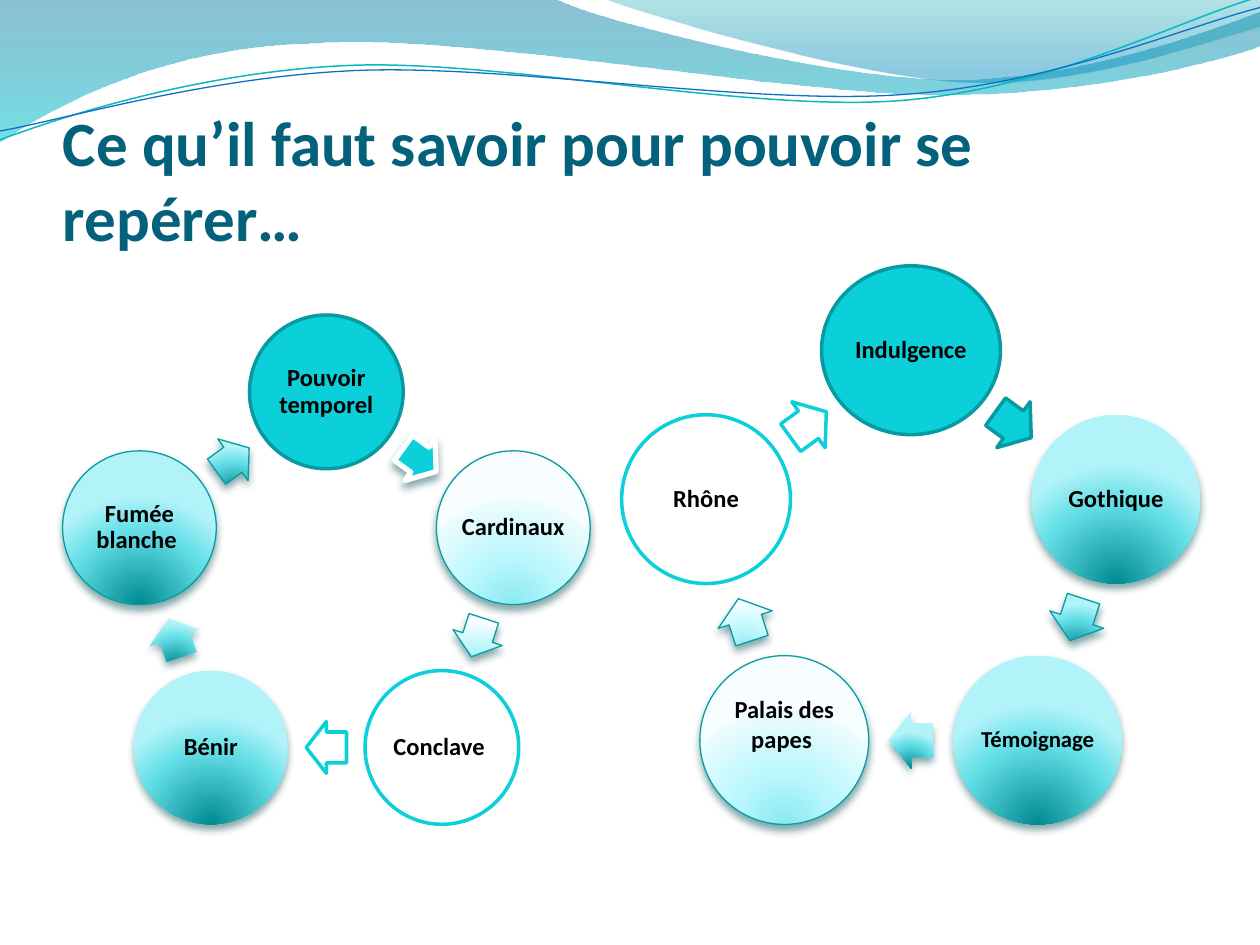
from itertools import islice
from math import cos, radians, sin

from lxml.etree import SubElement
from pptx import Presentation
from pptx.dml.color import RGBColor
from pptx.enum.shapes import MSO_SHAPE
from pptx.enum.text import MSO_ANCHOR, PP_ALIGN
from pptx.oxml import parse_xml
from pptx.oxml.ns import nsdecls, qn
from pptx.util import Inches, Pt

COLORS = {
    "title": "04617B", "text": "000000", "white": "FFFFFF",
    "cyan": "0BD0D9", "teal": "089AA1", "edge": "069CA3", "shadow": "024B4E",
    "wave_teal": "0AB8BF", "wave_blue": "0F6FC6",
}

# Radial gradients: (position, colour)
GRADIENTS = {
    "light": [(0, "8BE9F1"), (43, "B9F7FD"), (93, "EAFCFE"), (100, "F8FEFF")],
    "dark": [(0, "008A91"), (68, "64DFE7"), (100, "B1F3F9")],
}
RADIAL = ('<a:path path="circle"><a:fillToRect l="50000" t="130000" '
          'r="50000" b="-30000"/></a:path>')
DOWNWARD = '<a:lin ang="5400000" scaled="0"/>'

# Styles: fill, line colour, line width, shadow
STYLES = {
    "solid": ("cyan", "teal", 2, False),
    "solid_white": ("cyan", "white", 3, True),
    "outline": ("white", "cyan", 2, False),
    "light": ("light", "edge", 0.75, True),
    "dark": ("dark", None, 0, True),
    "dark_edge": ("dark", "edge", 0.75, True),
}

# Waves: start point, then lines (one point) and Bézier curves (three points)
BANDS = [
    ([(0, 0), [(4.4, -0.01)],
      [(4.76, 0.17), (6.64, 0.63), (7.58, 0.63)],
      [(8.53, 0.63), (9.58, 0.26), (10, 0.09)],
      [(10.01, 0.36)],
      [(9.83, 0.44), (8.7, 0.76), (7.46, 0.75)],
      [(6.22, 0.75), (3.82, 0.28), (2.57, 0.34)],
      [(1.29, 0.36), (0.46, 0.83), (-0.01, 1.13)],
      [(0, 0)]],
     [(0, "0074A1", 45), (100, "00C6CF", 55)]),
    ([(4.79, -0.01),
      [(5.09, 0.11), (6.82, 0.62), (7.69, 0.65)],
      [(8.56, 0.69), (9.61, 0.32), (10, 0.21)],
      [(10, 0)],
      [(4.79, -0.01)]],
     [(0, "00A1A9", 30), (80, "008BBF", 45)]),
]
CURVES = [
    ([(0, 1.11),
      [(0.48, 0.93), (1.58, 0.57), (2.77, 0.52)],
      [(3.95, 0.47), (5.93, 0.89), (7.13, 0.8)],
      [(8.33, 0.71), (9.38, 0.15), (9.98, -0.02)]], "wave_teal", 0.85),
    ([(0, 1.04),
      [(0.47, 0.96), (1.64, 0.61), (2.83, 0.56)],
      [(4.03, 0.51), (5.97, 0.84), (7.17, 0.75)],
      [(8.36, 0.67), (9.41, 0.21), (10, 0.06)]], "wave_blue", 0.75),
]

# Cycles: text, node style, style of the arrow to the next node, extra format
POPE_CYCLE = [
    ("Pouvoir temporel", "solid", "solid_white", {}),
    ("Cardinaux ", "light", "light", {}),
    ("Conclave ", "outline", "outline", {}),
    ("Bénir", "dark", "dark", {}),
    ("Fumée blanche ", "dark_edge", "dark_edge", {}),
]
AVIGNON_CYCLE = [
    ("Indulgence", "solid", "solid", {"width": 1.42}),
    ("Gothique", "dark", "dark_edge", {}),
    ("Témoignage", "dark", "dark", {"size": 13}),
    ("Palais des papes ", "light", "light", {"bottom": 0.28, "spacing": 1}),
    ("Rhône", "outline", "outline", {}),
]


def rgb(name):
    return RGBColor.from_string(COLORS[name])


def add_text(s, text, x, y, width, height, size=14, color="text",
             align=PP_ALIGN.CENTER, anchor=MSO_ANCHOR.MIDDLE,
             margins=(0.02, 0.02, 0.02, 0.02), spacing=0.9):
    sp = s.shapes.add_textbox(*map(Inches, (x, y, width, height)))
    tf = sp.text_frame
    tf.word_wrap = True
    tf.vertical_anchor = anchor
    (tf.margin_left, tf.margin_top,
     tf.margin_right, tf.margin_bottom) = map(Inches, margins)
    p = tf.paragraphs[0]
    p.alignment = align
    p.line_spacing = spacing
    r = p.add_run()
    r.text = text
    r.font.name = "Calibri"
    r.font.size = Pt(size)
    r.font.bold = True
    r.font.color.rgb = rgb(color)


def set_gradient(sp, stops, direction):
    gs = "".join(
        f'<a:gs pos="{pos * 1000}"><a:srgbClr val="{color}">'
        + "".join(f'<a:alpha val="{a * 1000}"/>' for a in alpha)
        + "</a:srgbClr></a:gs>"
        for pos, color, *alpha in stops)
    # The fill follows the position and the geometry
    sp._element.spPr.insert(2, parse_xml(
        f'<a:gradFill {nsdecls("a")} rotWithShape="0">'
        f"<a:gsLst>{gs}</a:gsLst>{direction}</a:gradFill>"))


def set_line(sp, color=None, width=0):
    if color is None:
        sp.line.fill.background()
    else:
        sp.line.color.rgb = rgb(color)
        sp.line.width = Pt(width)


def add_styled(s, kind, cx, cy, width, height, style):
    """Add a preset shape centred on a point."""
    fill, line, line_width, shadow = STYLES[style]
    sp = s.shapes.add_shape(kind, Inches(cx - width / 2), Inches(cy - height / 2),
                            Inches(width), Inches(height))
    if fill in GRADIENTS:
        set_gradient(sp, GRADIENTS[fill], RADIAL)
    else:
        sp.fill.solid()
        sp.fill.fore_color.rgb = rgb(fill)
    set_line(sp, line, line_width)
    sp.shadow.inherit = False
    if shadow:
        effects = sp._element.spPr.find(qn("a:effectLst"))
        outer = SubElement(effects, qn("a:outerShdw"), blurRad=str(Pt(4.5)),
                           dist=str(Pt(3)), dir="5400000", rotWithShape="0")
        color = SubElement(outer, qn("a:srgbClr"), val=COLORS["shadow"])
        SubElement(color, qn("a:alpha"), val="48000")
    return sp


def add_wave(s, outline, closed):
    """Add a freeform whose three-point segments are Bézier curves."""
    start, *segments = outline
    builder = s.shapes.build_freeform(*map(Inches, start))
    builder.add_line_segments(
        [(Inches(x), Inches(y)) for seg in segments for x, y in seg], close=closed)
    sp = builder.convert_to_shape()
    sp.shadow.inherit = False

    # Join the three lines of each curve into one cubic segment
    lines = iter(list(sp._element.spPr.iter(qn("a:lnTo"))))
    for seg in segments:
        first, *others = islice(lines, len(seg))
        if others:
            first.tag = qn("a:cubicBezTo")
        for line in others:
            first.append(line[0])
            line.getparent().remove(line)
    return sp


def add_cycle(s, items, cx, cy, radius, node, arrow):
    """Place nodes on a regular polygon, with an arrow halfway along each side."""
    group = s.shapes.add_group_shape()
    step = 360 / len(items)
    side = radius * cos(radians(step / 2))
    inner = cos(radians(45))  # square inscribed in a circle
    for i, (text, style, arrow_style, extra) in enumerate(items):
        fmt = dict(extra)
        width = fmt.pop("width", node)
        margins = (0.02, 0.02, 0.02, fmt.pop("bottom", 0.02))
        angle = radians(i * step)
        x, y = cx + radius * sin(angle), cy - radius * cos(angle)
        add_styled(group, MSO_SHAPE.OVAL, x, y, width, node, style)
        w, h = width * inner, node * inner
        add_text(group, text, x - w / 2, y - h / 2, w, h, margins=margins, **fmt)

        turn = (i + 0.5) * step
        angle = radians(turn)
        sp = add_styled(group, MSO_SHAPE.RIGHT_ARROW, cx + side * sin(angle),
                        cy - side * cos(angle), *arrow, arrow_style)
        sp.adjustments[0] = 0.6
        sp.adjustments[1] = 0.5
        sp.rotation = turn


def main():
    prs = Presentation()
    prs.slide_width, prs.slide_height = Inches(10), Inches(7.5)
    s = prs.slides.add_slide(prs.slide_layouts[6])

    # Waves along the top
    for outline, stops in BANDS:
        sp = add_wave(s, outline, closed=True)
        set_gradient(sp, stops, DOWNWARD)
        set_line(sp)
    for outline, color, width in CURVES:
        sp = add_wave(s, outline, closed=False)
        sp.fill.background()
        set_line(sp, color, width)

    # Title
    add_text(s, "Ce qu’il faut savoir pour pouvoir se repérer…", 0.5, 0.77, 9, 1.25,
             size=36, color="title", align=PP_ALIGN.LEFT,
             anchor=MSO_ANCHOR.BOTTOM, margins=(0, 0.05, 0, 0), spacing=1)

    # Word cycles
    add_cycle(s, POPE_CYCLE, 2.59, 4.67, 1.56, node=1.22, arrow=(0.32, 0.41))
    add_cycle(s, AVIGNON_CYCLE, 7.23, 4.49, 1.71, node=1.34, arrow=(0.35, 0.45))

    prs.save("out.pptx")


if __name__ == "__main__":
    main()
